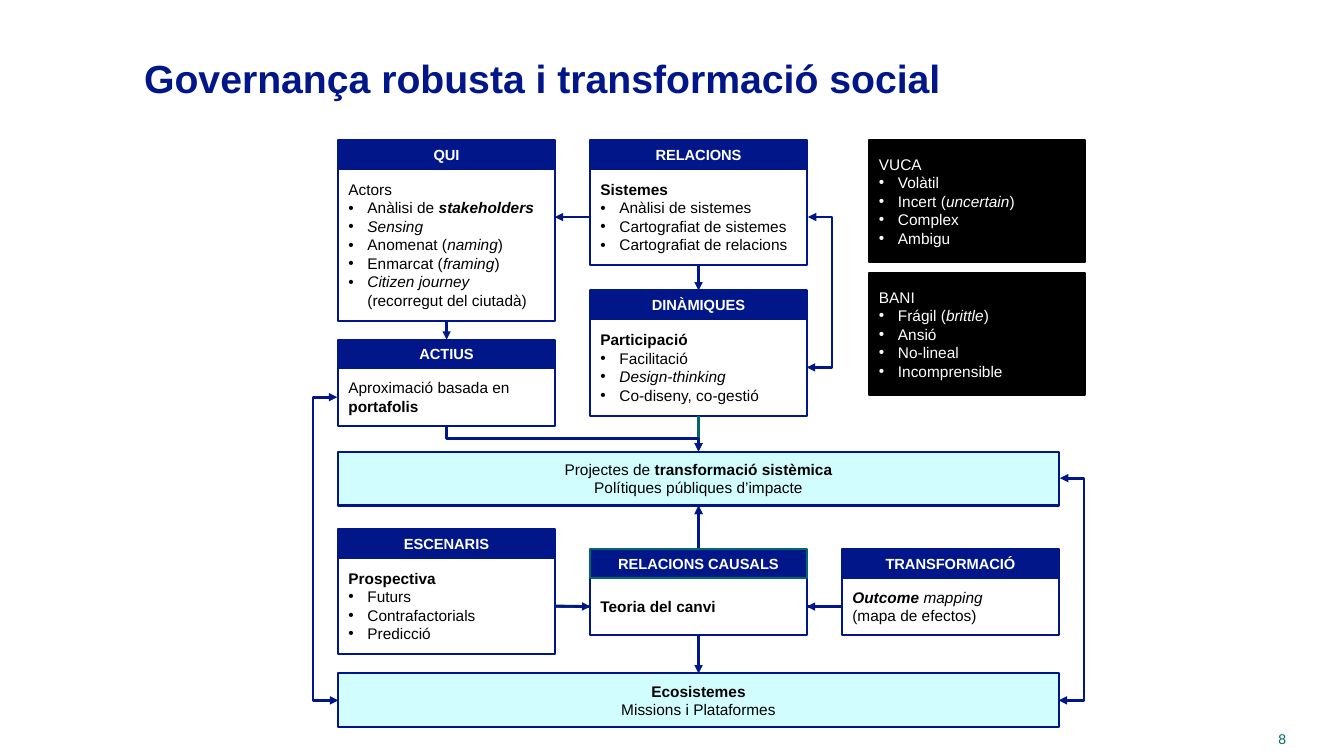
from dataclasses import dataclass

from lxml.etree import SubElement
from pptx import Presentation
from pptx.dml.color import RGBColor as Color
from pptx.enum.shapes import MSO_CONNECTOR as Connector, MSO_SHAPE as Preset
from pptx.enum.text import MSO_ANCHOR as Anchor, PP_ALIGN as Align
from pptx.oxml.ns import qn
from pptx.util import Cm, Pt


@dataclass(frozen=True)
class Theme:
    font: str = "Arial"
    navy: str = "001689"
    teal: str = "00676C"
    aqua: str = "D1FDFF"
    black: str = "000000"
    white: str = "FFFFFF"
    title: float = 28
    body: float = 11
    header: float = 10.5
    number: float = 10
    border: float = 1.5
    arrow: float = 2


@dataclass(frozen=True)
class Card:
    header: str
    column: int
    top: float
    height: float
    lines: tuple
    header_line: str = Theme.navy


@dataclass(frozen=True)
class Panel:
    left: float
    top: float
    width: float
    height: float
    lines: tuple
    fill: str
    line: str
    color: str
    align: Align = Align.LEFT


@dataclass(frozen=True)
class Elbow:
    start: tuple
    end: tuple
    bend: float = None
    turn: int = 0
    color: str = Theme.navy
    both: bool = False


THEME = Theme()
LEFT, PITCH, WIDTH, HEADER = 8.53, 6.35, 5.45, 0.72
SPAN = 2 * PITCH + WIDTH
RIGHT = LEFT + SPAN
MIDDLE = LEFT + PITCH + WIDTH / 2
LOOP, NUDGE = 0.64, 0.03
PROJECTS, ECOSYSTEMS, BANNER = 11.38, 16.97, 1.36
CAUSAL_Y = 15.28

CARDS = (
    Card("QUI", 0, 3.53, 3.84, (
        "Actors", "- Anàlisi de *_stakeholders_*", "- _Sensing_", "- Anomenat (_naming_)",
        "- Enmarcat (_framing_)", "- _Citizen journey_ (recorregut del ciutadà)")),
    Card("ESCENARIS", 0, 13.33, 2.44, (
        "*Prospectiva*", "- Futurs", "- Contrafactorials", "- Predicció")),
    Card("TRANSFORMACIÓ", 2, 13.84, 1.45, ("*_Outcome_*_ mapping_", "(mapa de efectos)")),
    Card("ACTIUS", 0, 8.56, 1.45, ("Aproximació basada en *portafolis*",)),
    Card("RELACIONS", 1, 3.53, 2.44, (
        "*Sistemes*", "- Anàlisi de sistemes", "- Cartografiat de sistemes",
        "- Cartografiat de relacions")),
    Card("RELACIONS CAUSALS", 1, 13.84, 1.45, ("*Teoria del canvi*",), THEME.teal),
    Card("DINÀMIQUES", 1, 7.32, 2.44, (
        "*Participació*", "- Facilitació", "- _Design-thinking_", "- Co-diseny, co-gestió")),
)
CONTEXTS = tuple(
    Panel(21.9, top, WIDTH, 3.07, lines, THEME.black, THEME.black, THEME.white)
    for top, lines in (
        (3.53, ("VUCA", "- Volàtil", "- Incert (_uncertain_)", "- Complex", "- Ambigu")),
        (6.88, ("BANI", "- Frágil (_brittle_)", "- Ansió", "- No-lineal", "- Incomprensible")),
    ))
BANNERS = tuple(
    Panel(LEFT, top, SPAN, BANNER, lines, THEME.aqua, THEME.navy, THEME.black, Align.CENTER)
    for top, lines in (
        (PROJECTS, ("Projectes de *transformació sistèmica*", "Polítiques públiques d’impacte")),
        (ECOSYSTEMS, ("*Ecosistemes*", "Missions i Plataformes")),
    ))
BRANCHES = (
    Elbow((MIDDLE, PROJECTS + BANNER), (LEFT + WIDTH, CAUSAL_Y), turn=1, color=THEME.teal),
    Elbow((MIDDLE, PROJECTS + BANNER), (LEFT + 2 * PITCH, CAUSAL_Y), turn=-1),
)
LOOPS = (
    Elbow((RIGHT, 17.65), (RIGHT + NUDGE, 12.05), LOOP, both=True),
    Elbow((LEFT, 17.65), (LEFT - NUDGE, 10.01), -LOOP, both=True),
    Elbow((LEFT + PITCH + WIDTH, 9.26), (LEFT + PITCH + WIDTH + NUDGE, 5.47), LOOP, both=True),
    Elbow((MIDDLE, PROJECTS), (LEFT + WIDTH / 2, 10.73), 0.33, turn=-1),
)


def write(shape, lines: tuple, *, size: float, color: str, align: Align = Align.LEFT,
          bold: bool = False) -> None:
    frame = shape.text_frame
    frame.word_wrap = True
    frame.vertical_anchor = Anchor.MIDDLE
    for index, line in enumerate(lines):
        paragraph = frame.add_paragraph() if index else frame.paragraphs[0]
        paragraph.alignment = align
        if line.startswith("- "):
            properties = paragraph._p.get_or_add_pPr()
            properties.set("marL", str(Cm(0.48)))
            properties.set("indent", str(-Cm(0.48)))
            SubElement(properties, qn("a:buFont"), typeface=THEME.font)
            SubElement(properties, qn("a:buChar"), char="•")
        for strong, part in enumerate(line.removeprefix("- ").split("*")):
            for slanted, text in enumerate(part.split("_")):
                if text:
                    run = paragraph.add_run()
                    run.text = text
                    run.font.name = THEME.font
                    run.font.size = Pt(size)
                    run.font.color.rgb = Color.from_string(color)
                    run.font.bold = bold or strong % 2 == 1
                    run.font.italic = slanted % 2 == 1


def add_box(slide, left: float, top: float, width: float, height: float, fill: str, line: str):
    shape = slide.shapes.add_shape(Preset.RECTANGLE, Cm(left), Cm(top), Cm(width), Cm(height))
    shape.shadow.inherit = False
    shape.fill.solid()
    shape.fill.fore_color.rgb = Color.from_string(fill)
    shape.line.color.rgb = Color.from_string(line)
    shape.line.width = Pt(THEME.border)
    return shape


def add_panel(slide, panel: Panel):
    shape = add_box(slide, panel.left, panel.top, panel.width, panel.height, panel.fill, panel.line)
    write(shape, panel.lines, size=THEME.body, color=panel.color, align=panel.align)
    return shape


def add_card(slide, card: Card) -> tuple:
    left = LEFT + card.column * PITCH
    body = add_panel(slide, Panel(left, card.top + HEADER, WIDTH, card.height, card.lines,
                                  THEME.white, THEME.navy, THEME.black))
    header = add_box(slide, left, card.top, WIDTH, HEADER, THEME.navy, card.header_line)
    write(header, (card.header,), size=THEME.header, color=THEME.white, align=Align.CENTER, bold=True)
    return header, body


def add_line(slide, kind: Connector, start: tuple, end: tuple, color: str, heads: tuple):
    connector = slide.shapes.add_connector(kind, *(Cm(value) for value in start + end))
    connector.line.color.rgb = Color.from_string(color)
    connector.line.width = Pt(THEME.arrow)
    for head in heads:
        SubElement(connector.line._get_or_add_ln(), qn(head), type="triangle")
    SubElement(connector._element.spPr, qn("a:effectLst"))
    return connector


def add_arrow(slide, source, side: int, target=None, target_side: int = 0,
              end: tuple = (0, 0), color: str = THEME.navy) -> None:
    connector = add_line(slide, Connector.STRAIGHT, (0, 0), end, color, ("a:tailEnd",))
    connector.begin_connect(source, side)
    if target is not None:
        connector.end_connect(target, target_side)


def add_elbow(slide, elbow: Elbow) -> None:
    (x1, y1), (x2, y2) = start, end = elbow.start, elbow.end
    if elbow.turn:
        across, down = elbow.turn * (y2 - y1) / 2, elbow.turn * (x1 - x2) / 2
        x, y = (x1 + x2) / 2, (y1 + y2) / 2
        start, end = (x - across, y - down), (x + across, y + down)
    heads = ("a:headEnd", "a:tailEnd") if elbow.both else ("a:headEnd",)
    connector = add_line(slide, Connector.ELBOW, start, end, elbow.color, heads)
    properties = connector._element.spPr
    if elbow.turn:
        properties.find(qn("a:xfrm")).set("rot", str(elbow.turn % 4 * 5400000))
    geometry = properties.find(qn("a:prstGeom"))
    if elbow.bend is None:
        geometry.set("prst", "bentConnector2")
    else:
        ratio = elbow.bend / abs(end[0] - start[0])
        if end[0] < start[0] and not elbow.turn:
            ratio = -ratio
        SubElement(geometry.find(qn("a:avLst")), qn("a:gd"), name="adj1",
                   fmla=f"val {round(ratio * 100000)}")


def main() -> None:
    presentation = Presentation()
    presentation.slide_width, presentation.slide_height = Cm(33.87), Cm(19.05)
    slide = presentation.slides.add_slide(presentation.slide_layouts[5])
    title = slide.shapes.title
    title.left, title.top, title.width, title.height = Cm(3.38), Cm(1.17), Cm(27.15), Cm(1.57)
    write(title, ("Governança robusta i transformació social",), size=THEME.title,
          color=THEME.navy, bold=True)
    number = slide.shapes.add_textbox(Cm(30.53), Cm(18.24), Cm(2.13), Cm(0.74))
    write(number, ("8",), size=THEME.number, color=THEME.teal, align=Align.RIGHT)

    for branch in BRANCHES:
        add_elbow(slide, branch)
    for context in CONTEXTS:
        add_panel(slide, context)
    projects, ecosystems = [add_panel(slide, banner) for banner in BANNERS]
    cards = {card.header: add_card(slide, card) for card in CARDS}
    headers = {name: card[0] for name, card in cards.items()}
    bodies = {name: card[1] for name, card in cards.items()}
    causal = bodies["RELACIONS CAUSALS"]
    add_arrow(slide, bodies["RELACIONS"], 1, end=(LEFT + WIDTH, 5.47))
    add_arrow(slide, bodies["ESCENARIS"], 3, causal, 1)
    add_arrow(slide, bodies["TRANSFORMACIÓ"], 1, causal, 3)
    add_arrow(slide, causal, 2, ecosystems, 0)
    add_arrow(slide, bodies["RELACIONS"], 2, headers["DINÀMIQUES"], 0)
    add_arrow(slide, bodies["DINÀMIQUES"], 2, projects, 0, color=THEME.teal)
    add_arrow(slide, bodies["QUI"], 2, headers["ACTIUS"], 0)
    for loop in LOOPS:
        add_elbow(slide, loop)
    presentation.save("out.pptx")


if __name__ == "__main__":
    main()
